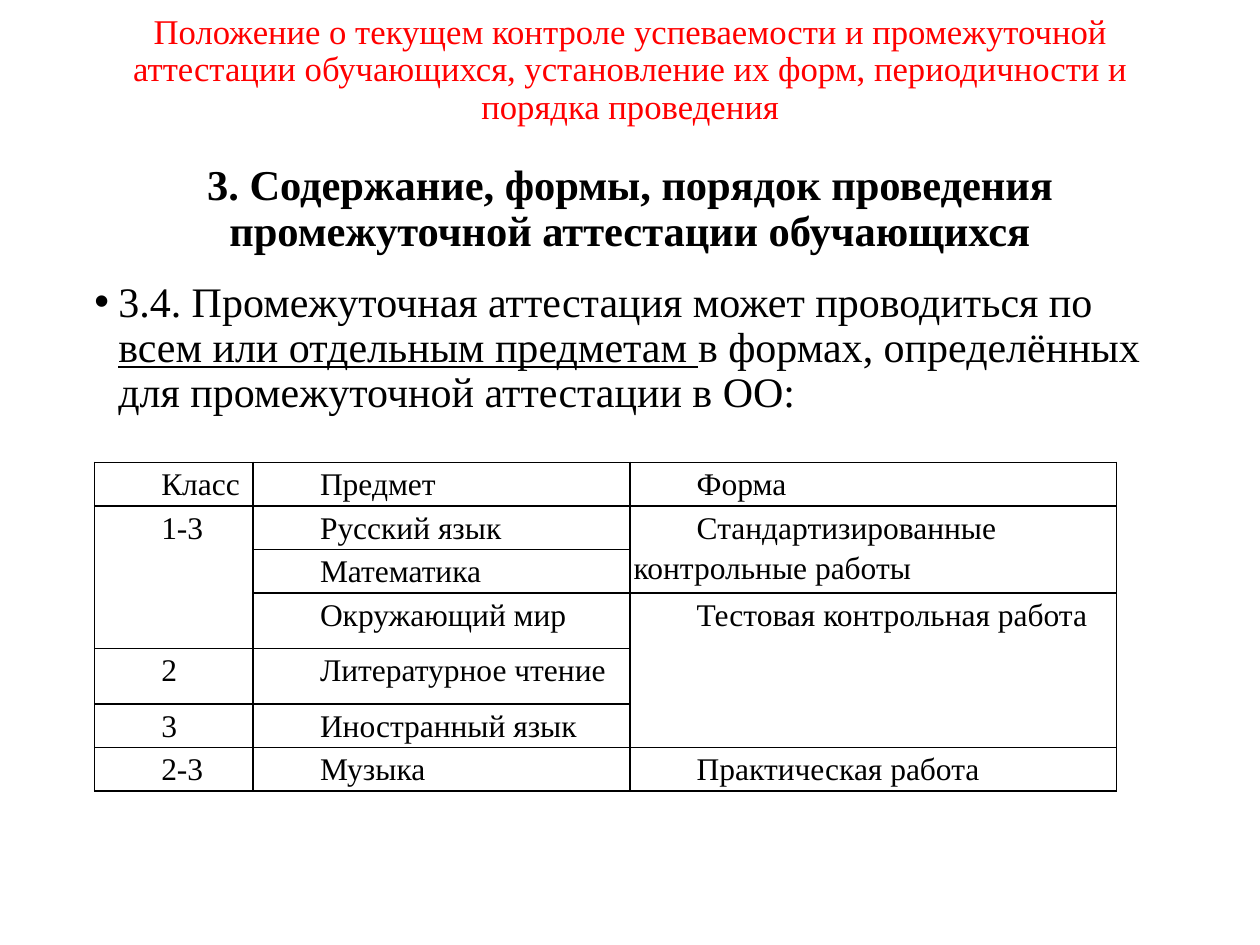
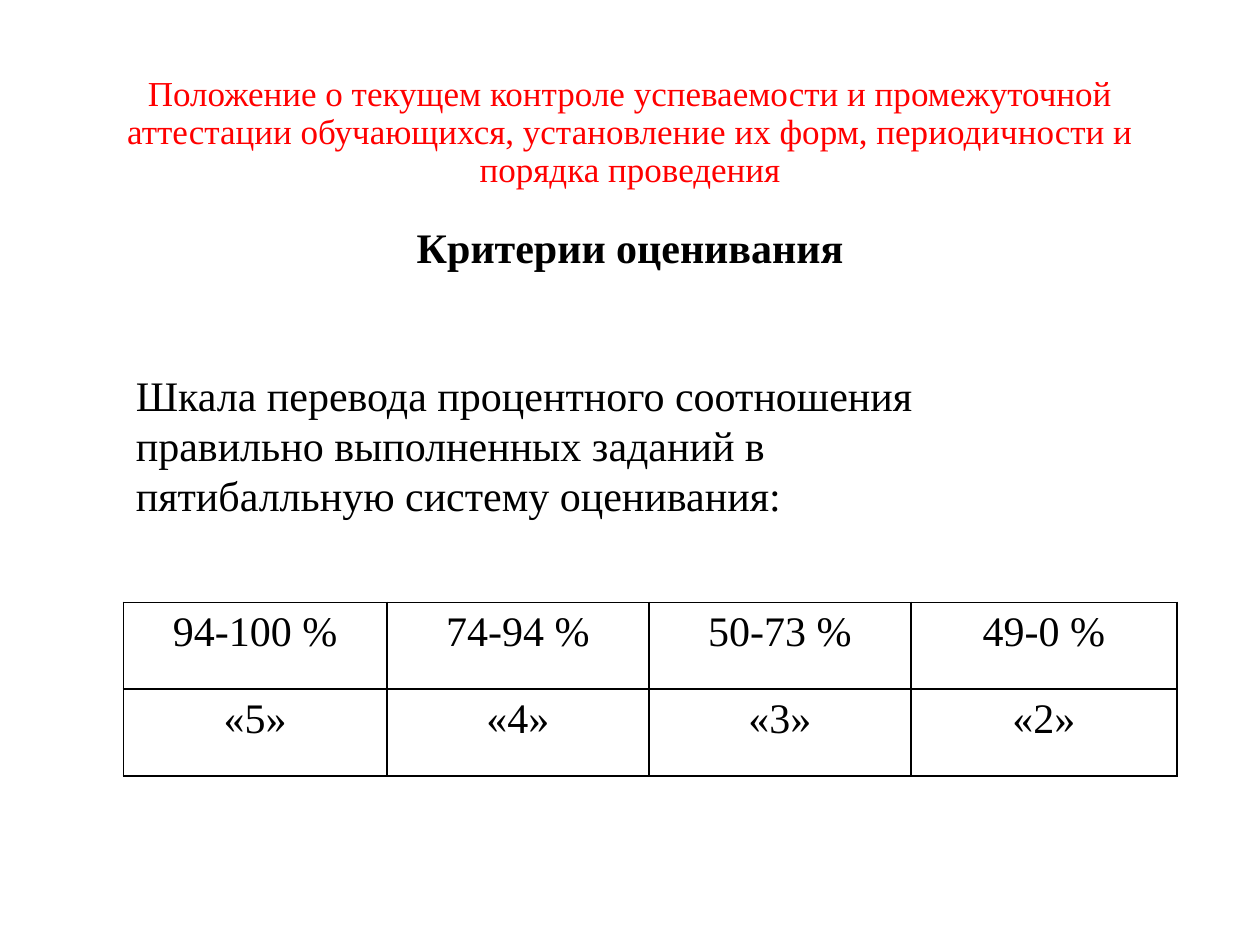
from lxml import etree
from pptx import Presentation
from pptx.dml.color import RGBColor
from pptx.enum.text import MSO_ANCHOR, PP_ALIGN
from pptx.oxml.ns import qn
from pptx.util import Inches, Pt

CENTER, JUSTIFY, LEFT = PP_ALIGN.CENTER, PP_ALIGN.JUSTIFY, PP_ALIGN.LEFT
MIDDLE, TOP = MSO_ANCHOR.MIDDLE, MSO_ANCHOR.TOP
COLORS = {"title": "FF0000", "text": "000000", "border": "000000"}
FONT = "Times New Roman"
SLIDE_W, SLIDE_H = 10, 7.5
TITLE_LEFT, TITLE_W = 0.69, 8.62
TITLE = ("Положение о текущем контроле успеваемости и промежуточной аттестации "
         "обучающихся, установление их форм, периодичности и порядка проведения")

# Class, subject, form; None continues the cell above
FORMS = [
    ("Класс", "Предмет", "Форма"),
    ("1-3", "Русский язык", "Стандартизированные контрольные работы"),
    (None, "Математика", None),
    (None, "Окружающий мир", "Тестовая контрольная работа"),
    ("2", "Литературное чтение", None),
    ("3", "Иностранный язык", None),
    ("2-3", "Музыка", "Практическая работа"),
]
GRADES = [
    ("94-100 %", "74-94 %", "50-73 %", "49-0 %"),
    ("«5»", "«4»", "«3»", "«2»"),
]


def add_run(p, text, size=24, color="text", bold=False, underline=False):
    r = p.add_run()
    r.text = text
    f = r.font
    f.name, f.size, f.bold, f.underline = FONT, Pt(size), bold, underline
    f.color.rgb = RGBColor.from_string(COLORS[color])


def format_paragraph(p, align=LEFT, spacing=1.0, before=0, indent=0, hanging=0):
    p.alignment, p.line_spacing, p.space_before = align, spacing, Pt(before)
    pPr = p._p.get_or_add_pPr()
    pPr.set("marL", str(Inches(hanging)))
    pPr.set("indent", str(Inches(indent - hanging)))
    if hanging:
        etree.SubElement(pPr, qn("a:buFont")).set("typeface", "Arial")
        etree.SubElement(pPr, qn("a:buChar")).set("char", "•")


def add_box(s, left, top, width, height, anchor=TOP):
    tf = s.shapes.add_textbox(*map(Inches, (left, top, width, height))).text_frame
    tf.word_wrap = True
    tf.vertical_anchor = anchor
    return tf


def add_title(s, heading, top, height, size, heading_size, bottom=0.05):
    tf = add_box(s, TITLE_LEFT, top, TITLE_W, height, MIDDLE)
    tf.margin_bottom = Inches(bottom)
    p = tf.paragraphs[0]
    format_paragraph(p, CENTER, 0.9)
    add_run(p, TITLE, size, "title")
    p = tf.add_paragraph()
    format_paragraph(p, CENTER, 0.9, before=21)
    add_run(p, heading, heading_size, bold=True)


def set_borders(cell):
    tcPr = cell._tc.get_or_add_tcPr()
    for i, side in enumerate(("lnL", "lnR", "lnT", "lnB")):
        ln = etree.Element(qn(f"a:{side}"), w=str(Pt(1)))
        fill = etree.SubElement(ln, qn("a:solidFill"))
        etree.SubElement(fill, qn("a:srgbClr")).set("val", COLORS["border"])
        tcPr.insert(i, ln)


def add_grid(s, rows, left, top, widths, heights, margin, size, align, indent=0):
    shape = s.shapes.add_table(len(rows), len(widths), Inches(left), Inches(top),
                               Inches(sum(widths)), Inches(sum(heights)))
    table = shape.table
    table.first_row = table.horz_banding = False
    for col, width in zip(table.columns, widths):
        col.width = Inches(width)
    for row, height in zip(table.rows, heights):
        row.height = Inches(height)
    for i, row in enumerate(rows):
        for j, text in enumerate(row):
            cell = table.cell(i, j)
            cell.fill.background()
            set_borders(cell)
            cell.margin_left = cell.margin_right = Inches(margin)
            cell.margin_top = cell.margin_bottom = 0
            if text is None:
                continue
            p = cell.text_frame.paragraphs[0]
            format_paragraph(p, align, 1.15, indent=indent)
            add_run(p, text, size)
            last = i
            while last + 1 < len(rows) and rows[last + 1][j] is None:
                last += 1
            if last > i:
                cell.merge(table.cell(last, j))


def build_forms(s):
    add_title(s, "3. Содержание, формы, порядок проведения промежуточной аттестации "
              "обучающихся", 0.29, 1.56, 19.8, 24.3)
    p = add_box(s, 0.65, 2.18, TITLE_W, 4.76).paragraphs[0]
    format_paragraph(p, spacing=0.9, hanging=0.19)
    add_run(p, "3.4. Промежуточная аттестация может проводиться по ")
    add_run(p, "всем или отдельным предметам ", underline=True)
    add_run(p, "в формах, определённых для промежуточной аттестации в ОО:")
    low, high = 0.32, 0.44
    add_grid(s, FORMS, 0.75, 3.67, (1.26, 2.99, 3.86),
             (low, low, low, high, high, low, low), 0.03, 18, JUSTIFY, indent=0.5)


def build_grades(s):
    add_title(s, "Критерии оценивания", 0.4, 2.33, 20, 24, bottom=0.41)
    add_grid(s, GRADES, 0.98, 4.78, (2.09, 2.08, 2.08, 2.11), (0.69, 0.69),
             0.07, 24, CENTER)
    p = add_box(s, 0.98, 2.88, 7.09, 1.62).paragraphs[0]
    format_paragraph(p)
    add_run(p, "Шкала перевода процентного соотношения правильно выполненных "
            "заданий в пятибалльную систему оценивания:")


def main():
    prs = Presentation()
    prs.slide_width, prs.slide_height = Inches(SLIDE_W), Inches(SLIDE_H)
    for build in (build_forms, build_grades):
        build(prs.slides.add_slide(prs.slide_layouts[6]))
    prs.save("out.pptx")


if __name__ == "__main__":
    main()
